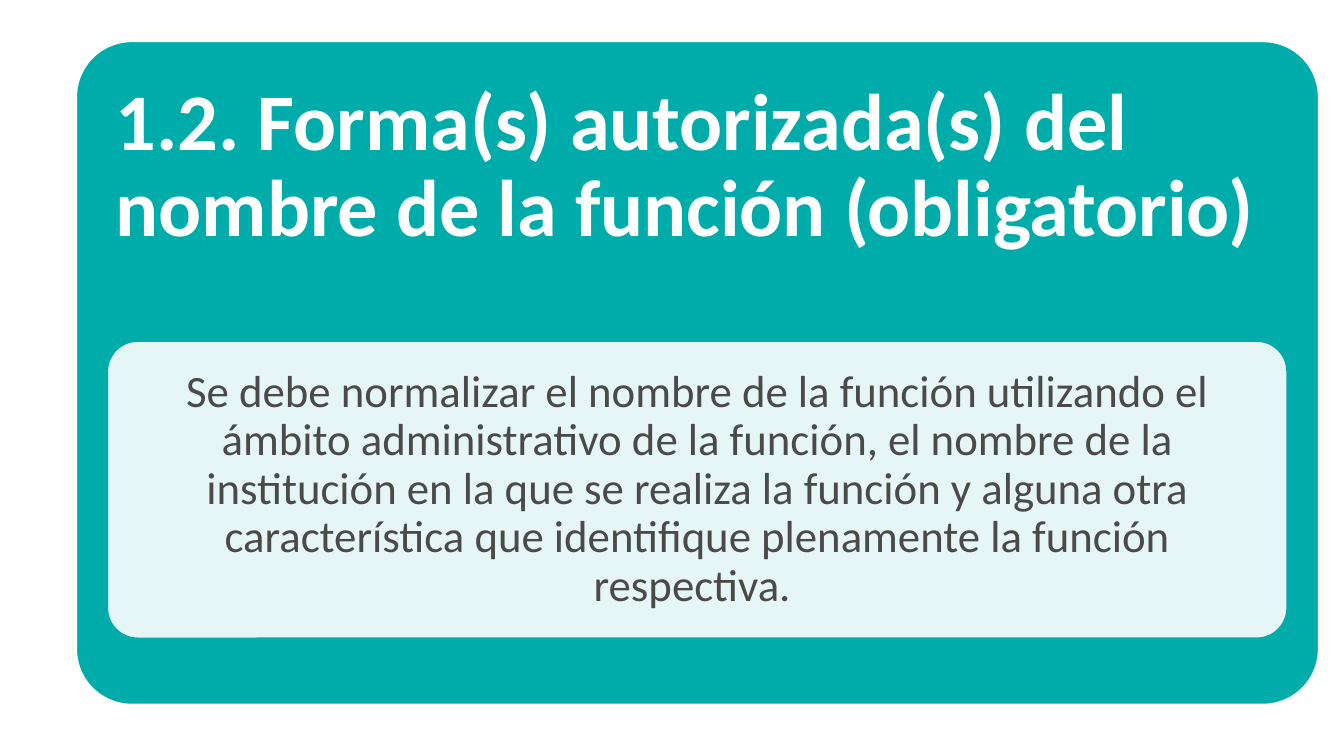
from lxml.etree import SubElement
from pptx import Presentation
from pptx.dml.color import RGBColor
from pptx.enum.shapes import MSO_SHAPE as Shape
from pptx.enum.text import MSO_ANCHOR as Anchor, PP_ALIGN as Align
from pptx.oxml.ns import qn
from pptx.util import Inches, Pt

TEAL, WHITE, GRAY = "00ACA9", "FFFFFF", "4A4A49"
CORNER_INSET = 0.29


def paint(color_format, hex_color):
    color_format.rgb = RGBColor.from_string(hex_color)


deck = Presentation()
deck.slide_width = Inches(10)
deck.slide_height = deck.slide_width * 9 // 16
slide = deck.slides.add_slide(deck.slide_layouts[6])
column, row = deck.slide_width / 100, deck.slide_height / 100

heading = "1.2. Forma(s) autorizada(s) del nombre de la función (obligatorio)"
explanation = (
    "Se debe normalizar el nombre de la función utilizando el ámbito "
    "administrativo de la función, el nombre de la institución en la que se "
    "realiza la función y alguna otra característica que identifique "
    "plenamente la función respectiva. "
)

panels = [
    (5.6, 5.33, 92.6, 88, 0.085, TEAL, 100, WHITE,
     heading, 43, True, WHITE, Align.LEFT, Anchor.TOP, 0.18),
    (7.9, 44.98, 87.95, 39.6, 0.105, WHITE, 90, TEAL,
     explanation, 24, False, GRAY, Align.CENTER, Anchor.MIDDLE, 0.1),
]

for (left, top, width, height, rounding, fill, opacity, outline,
     wording, size, bold, ink, align, anchor, margin) in panels:
    x, y = round(left * column), round(top * row)
    w, h = round(width * column), round(height * row)
    panel = slide.shapes.add_shape(Shape.ROUNDED_RECTANGLE, x, y, w, h)
    panel.shadow.inherit = False
    panel.adjustments[0] = rounding
    panel.fill.solid()
    paint(panel.fill.fore_color, fill)
    if opacity < 100:
        tint = panel._element.spPr.find(qn("a:solidFill"))[0]
        SubElement(tint, qn("a:alpha")).set("val", str(opacity * 1000))
    paint(panel.line.color, outline)
    panel.line.width = Pt(2)

    inset = round(CORNER_INSET * rounding * h)
    caption = slide.shapes.add_textbox(
        x + inset, y + inset, w - 2 * inset, h - 2 * inset)
    frame = caption.text_frame
    frame.word_wrap = True
    frame.vertical_anchor = anchor
    frame.margin_left = frame.margin_right = Inches(margin)
    frame.margin_top = frame.margin_bottom = Inches(margin)
    frame.text = wording
    paragraph = frame.paragraphs[0]
    paragraph.alignment = align
    paragraph.line_spacing = 0.9
    font = paragraph.runs[0].font
    font.name, font.size, font.bold = "Calibri", Pt(size), bold
    paint(font.color, ink)

deck.save("out.pptx")
